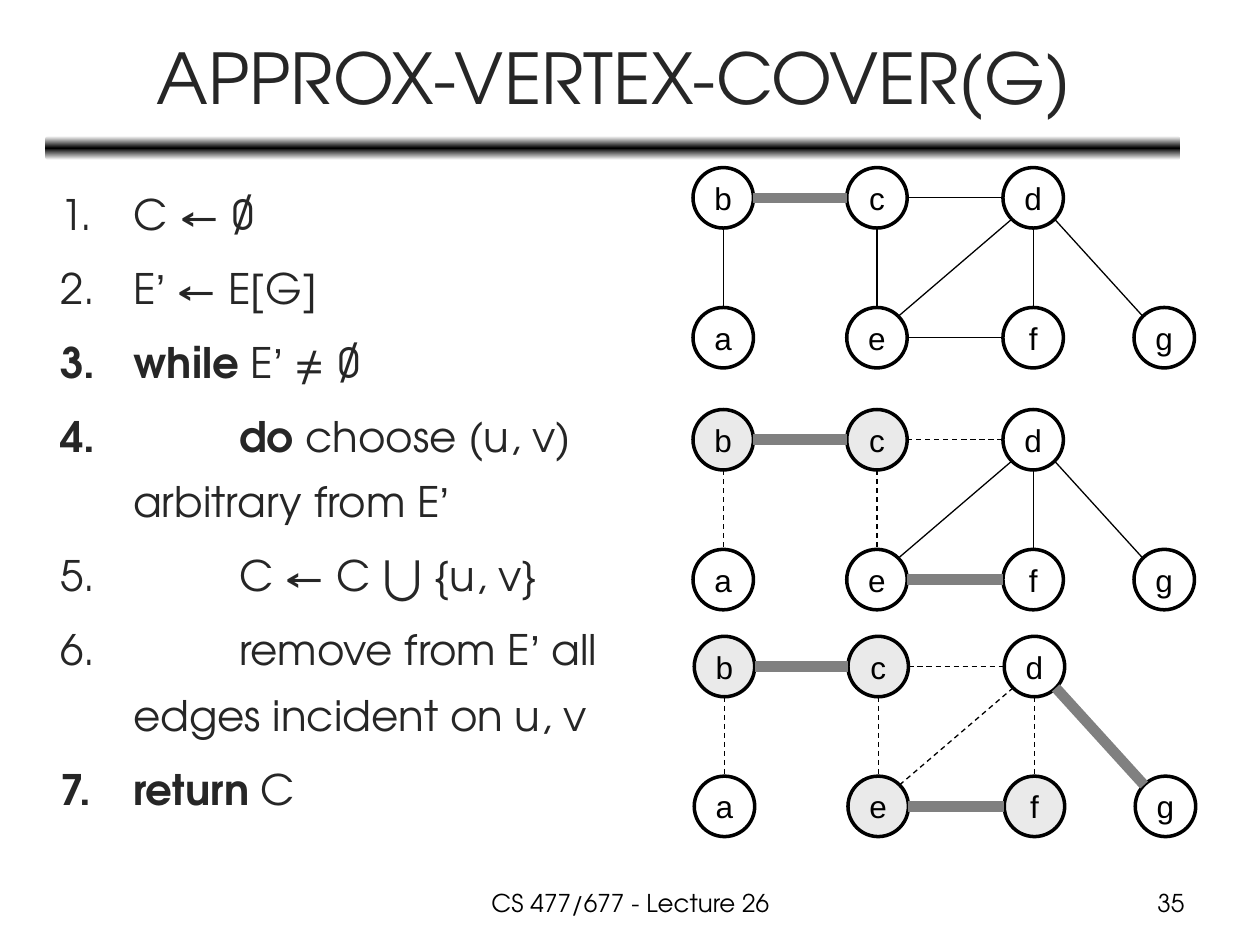
from copy import deepcopy
from math import hypot

from lxml.etree import SubElement
from pptx import Presentation
from pptx.dml.color import RGBColor
from pptx.enum.dml import MSO_LINE
from pptx.enum.shapes import MSO_CONNECTOR, MSO_SHAPE
from pptx.enum.text import MSO_ANCHOR, MSO_AUTO_SIZE, PP_ALIGN
from pptx.oxml.ns import qn
from pptx.util import Inches, Pt

BODY_FONT = "TeX Gyre Adventor"
NODE_FONT = "Arial"

NODE_SIZE = 0.48
NODES = {
    "a": (0, 1.11), "b": (0, 0), "c": (1.22, 0), "d": (2.46, 0),
    "e": (1.22, 1.11), "f": (2.46, 1.11), "g": (3.5, 1.11),
}
EDGES = ["bc", "cd", "ba", "ce", "df", "ef", "ed", "dg"]

# Left and top of each graph, and the edges chosen so far
STAGES = [
    (5.5, 1.33, ["bc"]),
    (5.5, 3.25, ["bc", "ef"]),
    (5.51, 5.05, ["bc", "ef", "dg"]),
]

# Step number (None continues the step above), text indent, (text, bold) runs
NEAR, FAR = 0.58, 1.42
STEPS = [
    (1, NEAR, [("C ← ∅", False)]),
    (2, NEAR, [("E’ ← E[G]", False)]),
    (3, NEAR, [("while", True), (" E’ ≠ ∅", False)]),
    (4, FAR, [("do", True), (" choose (u, v)", False)]),
    (None, NEAR, [("arbitrary from E’", False)]),
    (5, FAR, [("C ← C ⋃ {u, v}", False)]),
    (6, FAR, [("remove from E’ all", False)]),
    (None, NEAR, [("edges incident on u, v", False)]),
    (7, NEAR, [("return", True), (" C", False)]),
]


def color(hex_string):
    return RGBColor.from_string(hex_string)


def sign(value):
    return (value > 0) - (value < 0)


class SlideBuilder:
    TITLE = {"name": BODY_FONT, "size": Pt(40), "color": "262626"}
    STEP = {"name": BODY_FONT, "size": Pt(24), "color": "262626"}
    FOOTER = {"name": BODY_FONT, "size": Pt(14), "color": "000000"}
    NODE = {"name": NODE_FONT, "size": Pt(18), "color": "000000"}
    THIN = {"color": "000000", "width": Pt(0.75)}
    REMOVED = {**THIN, "dash_style": MSO_LINE.DASH}
    CHOSEN = {"color": "808080", "width": Pt(6)}
    OUTLINE = {"color": "000000", "width": Pt(2)}

    def __init__(self, presentation):
        self.slide = presentation.slides.add_slide(presentation.slide_layouts[5])

    @staticmethod
    def apply(target, style):
        """Set font or line attributes from a style."""
        for name, value in style.items():
            if name == "color":
                target.color.rgb = color(value)
            else:
                setattr(target, name, value)

    def add_run(self, paragraph, text, style):
        run = paragraph.add_run()
        run.text = text
        self.apply(run.font, style)

    def title(self, text, left, top, width, height):
        shape = self.slide.shapes.title
        shape.left, shape.top = Inches(left), Inches(top)
        shape.width, shape.height = Inches(width), Inches(height)
        frame = shape.text_frame
        frame.auto_size = MSO_AUTO_SIZE.NONE
        frame.vertical_anchor = MSO_ANCHOR.MIDDLE
        frame.paragraphs[0].alignment = PP_ALIGN.CENTER
        self.add_run(frame.paragraphs[0], text, self.TITLE)

    def rule(self, left, top, width, height):
        """Draw the bar under the title, fading to white above and below."""
        shape = self.slide.shapes.add_shape(
            MSO_SHAPE.ROUNDED_RECTANGLE,
            Inches(left), Inches(top), Inches(width), Inches(height))
        shape.shadow.inherit = False
        shape.line.fill.background()
        shape.fill.gradient()
        shape.fill.gradient_angle = 90
        stop_list = shape._element.spPr.find(".//" + qn("a:gsLst"))
        stop_list.append(deepcopy(stop_list[-1]))
        stops = [(0, "FFFFFF"), (0.5, "000000"), (1, "FFFFFF")]
        for stop, (position, hex_string) in zip(shape.fill.gradient_stops, stops):
            stop.position = position
            stop.color.rgb = color(hex_string)

    def text_box(self, left, top, width, height):
        frame = self.slide.shapes.add_textbox(
            Inches(left), Inches(top), Inches(width), Inches(height)).text_frame
        frame.word_wrap = True
        return frame

    def footer(self, text, alignment, left, top, width, height):
        paragraph = self.text_box(left, top, width, height).paragraphs[0]
        paragraph.alignment = alignment
        self.add_run(paragraph, text, self.FOOTER)

    def steps(self, steps, left, top, width, height):
        frame = self.text_box(left, top, width, height)
        for index, (number, indent, runs) in enumerate(steps):
            paragraph = frame.add_paragraph() if index else frame.paragraphs[0]
            paragraph.line_spacing = 1.3
            paragraph.space_before = Pt(4.8 if number else 0)
            properties = paragraph._p.get_or_add_pPr()
            properties.set("marL", str(Inches(indent)))
            properties.set("indent", str(-Inches(indent) if number else 0))
            if number:
                SubElement(properties, qn("a:buFont"), typeface="+mj-lt")
                SubElement(properties, qn("a:buAutoNum"),
                           type="arabicPeriod", startAt=str(number))
            for text, bold in runs:
                before, apostrophe, after = text.partition("’")
                for part in (before, apostrophe, after):
                    font = NODE_FONT if part == "’" else BODY_FONT
                    if part:
                        self.add_run(paragraph, part,
                                     {**self.STEP, "name": font, "bold": bold})

    def node(self, group, label, left, top, fill):
        shape = group.shapes.add_shape(
            MSO_SHAPE.OVAL, Inches(left), Inches(top),
            Inches(NODE_SIZE), Inches(NODE_SIZE))
        shape.shadow.inherit = False
        shape.fill.solid()
        shape.fill.fore_color.rgb = color(fill)
        self.apply(shape.line, self.OUTLINE)
        frame = shape.text_frame
        frame.word_wrap = False
        frame.vertical_anchor = MSO_ANCHOR.MIDDLE
        frame.paragraphs[0].alignment = PP_ALIGN.CENTER
        self.add_run(frame.paragraphs[0], label, self.NODE)

    def edge(self, group, start, end, style):
        """Join two node centres from rim to rim, in one of eight directions."""
        step_x, step_y = sign(end[0] - start[0]), sign(end[1] - start[1])
        reach = NODE_SIZE / 2 / hypot(step_x, step_y)
        connector = group.shapes.add_connector(
            MSO_CONNECTOR.STRAIGHT,
            Inches(start[0] + step_x * reach), Inches(start[1] + step_y * reach),
            Inches(end[0] - step_x * reach), Inches(end[1] - step_y * reach))
        self.apply(connector.line, style)
        SubElement(connector._element.spPr, qn("a:effectLst"))

    def graph(self, left, top, chosen):
        """Draw one stage; nodes of all but the newest chosen edge are covered."""
        group = self.slide.shapes.add_group_shape()
        covered = set("".join(chosen[:-1]))
        centers = {}
        for label, (x, y) in NODES.items():
            fill = "EAEAEA" if label in covered else "FFFFFF"
            self.node(group, label, left + x, top + y, fill)
            centers[label] = (left + x + NODE_SIZE / 2, top + y + NODE_SIZE / 2)
        for edge in EDGES:
            if edge in chosen:
                style = self.CHOSEN
            else:
                style = self.REMOVED if covered & set(edge) else self.THIN
            self.edge(group, centers[edge[0]], centers[edge[1]], style)


def main():
    presentation = Presentation()
    presentation.slide_width, presentation.slide_height = Inches(10), Inches(7.5)
    builder = SlideBuilder(presentation)
    builder.rule(0.36, 1.08, 9.01, 0.19)
    builder.title("APPROX-VERTEX-COVER(G)", 0.37, 0.11, 9, 0.99)
    builder.steps(STEPS, 0.38, 1.33, 5.84, 5.55)
    for left, top, chosen in STAGES:
        builder.graph(left, top, chosen)
    builder.footer("CS 477/677 - Lecture 26", PP_ALIGN.CENTER, 3.42, 7, 3.17, 0.35)
    builder.footer("35", PP_ALIGN.RIGHT, 7.17, 7, 2.33, 0.35)
    presentation.save("out.pptx")


if __name__ == "__main__":
    main()
